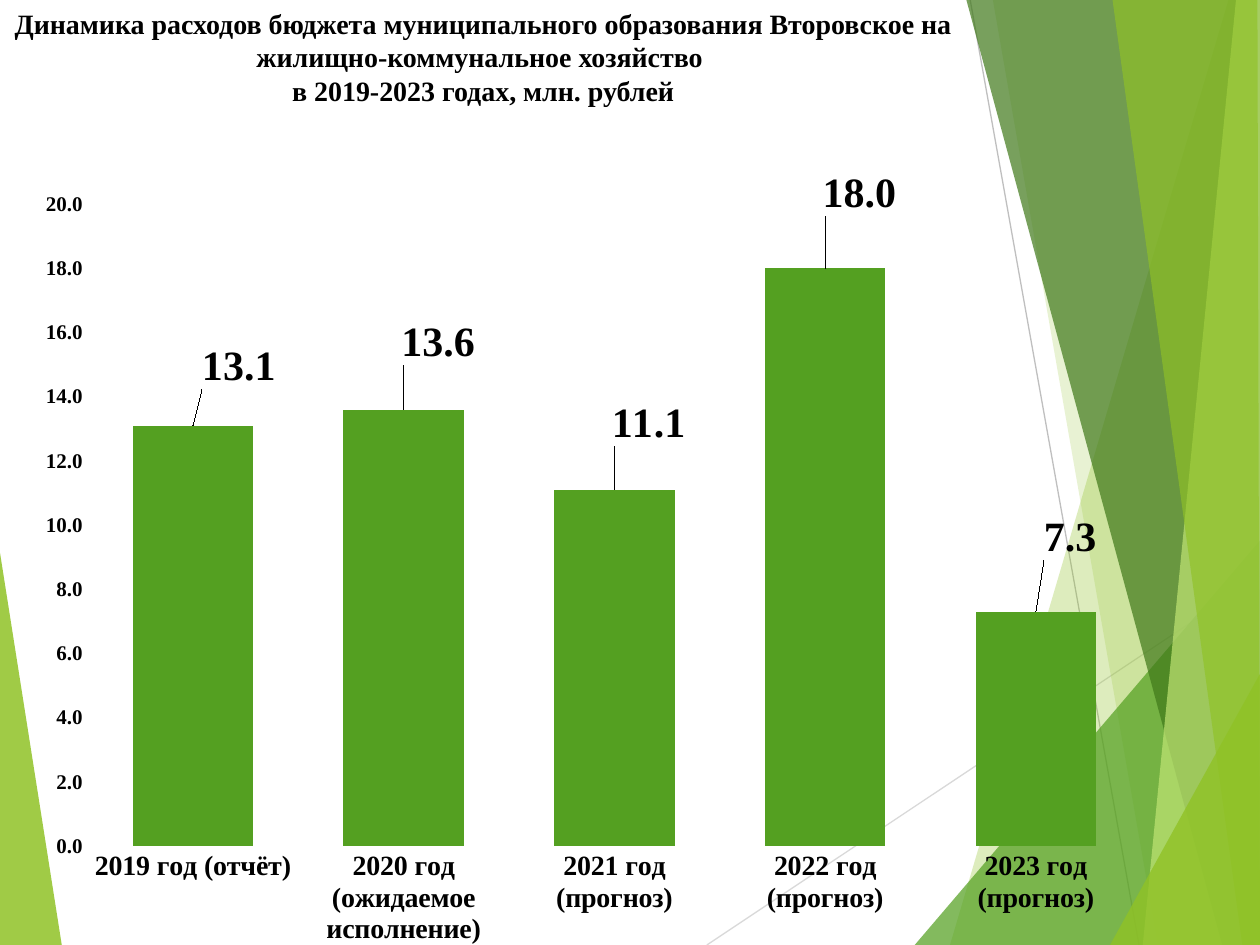
from lxml.etree import SubElement
from pptx import Presentation
from pptx.chart.data import CategoryChartData
from pptx.dml.color import RGBColor
from pptx.enum.chart import XL_CHART_TYPE, XL_LABEL_POSITION, XL_TICK_MARK
from pptx.enum.shapes import MSO_CONNECTOR
from pptx.enum.text import MSO_ANCHOR, PP_ALIGN
from pptx.oxml.ns import qn
from pptx.util import Inches, Pt

COLORS = {
    "black": "000000",
    "lime": "90C226",
    "green": "54A021",
    "forest": "3F7819",
    "pale": "C0E474",
    "silver": "D9D9D9",
    "gray": "BFBFBF",
}
FACETS = [
    ("lime", 85, [(0, 58.5), (4.9, 100), (0, 100)]),
    ("lime", 30, [(97.5, 0), (75.4, 100), (100, 100), (100, 0)]),
    ("lime", 20, [(78.8, 0), (91.9, 100), (100, 100), (100, 0)]),
    ("green", 72, [(72.6, 100), (100, 57.2), (100, 100)]),
    ("forest", 70, [(76.7, 0), (97, 100), (100, 100), (100, 0)]),
    ("pale", 70, [(98.1, 0), (90.7, 100), (100, 100), (100, 0)]),
    ("lime", 65, [(88.3, 0), (98.6, 100), (100, 100), (99.8, 0)]),
    ("lime", 80, [(88.1, 100), (100, 71.3), (100, 100)]),
]
RAYS = [("silver", (56.1, 100), (100, 61)), ("gray", (77, 0), (90.4, 100))]
TITLE = (
    "Динамика расходов бюджета муниципального образования Второвское на "
    "жилищно-коммунальное хозяйство \vв 2019-2023 годах, млн. рублей"
)
SPENDING = {
    "2019 год (отчёт)": 13.1,
    "2020 год (ожидаемое исполнение)": 13.6,
    "2021 год (прогноз)": 11.1,
    "2022 год (прогноз)": 18.0,
    "2023 год (прогноз)": 7.3,
}
LABEL_SHIFTS = [(0.04, -0.04), (0.03, -0.05), (0.03, -0.05), (0.03, -0.06), (0.03, -0.06)]
PLOT_AREA = {"layoutTarget": "inner", "xMode": "edge", "yMode": "edge",
             "x": 0.06, "y": 0.05, "w": 0.92, "h": 0.83}


def set_all(target, values):
    for name, value in values.items():
        setattr(target, name, value)


def place_manually(parent, index, values):
    for old in parent.findall(qn("c:layout")):
        parent.remove(old)
    layout = SubElement(parent, qn("c:layout"))
    manual = SubElement(layout, qn("c:manualLayout"))
    for name, value in values.items():
        SubElement(manual, qn(f"c:{name}")).set("val", str(value))
    parent.insert(index, layout)


class SlideBuilder:
    """Draws styled elements on one slide, with lengths in percent of its size."""

    def __init__(self, deck):
        self.deck = deck
        self.page = deck.slides.add_slide(deck.slide_layouts[6])
        self.font_values = {"name": "Times New Roman", "bold": True}

    def point(self, across, down):
        return (round(self.deck.slide_width * across / 100),
                round(self.deck.slide_height * down / 100))

    def color(self, name):
        return RGBColor.from_string(COLORS[name])

    def style(self, font, size):
        set_all(font, {**self.font_values, "size": Pt(size)})
        font.color.rgb = self.color("black")

    def facet(self, color, opacity, corners):
        start, *others = [self.point(*corner) for corner in corners]
        builder = self.page.shapes.build_freeform(*start, scale=1.0)
        builder.add_line_segments(others, close=True)
        shape = builder.convert_to_shape()
        shape.shadow.inherit = False
        shape.line.fill.background()
        shape.fill.solid()
        shape.fill.fore_color.rgb = self.color(color)
        tint = shape._element.spPr.find(".//" + qn("a:srgbClr"))
        SubElement(tint, qn("a:alpha")).set("val", str(opacity * 1000))

    def ray(self, color, start, end):
        line = self.page.shapes.add_connector(
            MSO_CONNECTOR.STRAIGHT, *self.point(*start), *self.point(*end))
        line.line.color.rgb = self.color(color)
        line.line.width = Pt(0.75)
        SubElement(line._element.spPr, qn("a:effectLst"))

    def title(self, text, position, size):
        box = self.page.shapes.add_textbox(*self.point(*position), *self.point(*size))
        set_all(box.text_frame, {"word_wrap": True, "vertical_anchor": MSO_ANCHOR.TOP})
        para = box.text_frame.paragraphs[0]
        para.text = text
        para.alignment = PP_ALIGN.CENTER
        for span in para.runs:
            self.style(span.font, 16)

    def axis(self, axis, size):
        set_all(axis, {"has_major_gridlines": False,
                       "major_tick_mark": XL_TICK_MARK.NONE,
                       "minor_tick_mark": XL_TICK_MARK.NONE})
        axis.format.line.fill.background()
        self.style(axis.tick_labels.font, size)

    def column_chart(self, values, shifts, position, size):
        data = CategoryChartData(number_format="0.0")
        data.categories = list(values)
        data.add_series("Series 1", list(values.values()))
        chart = self.page.shapes.add_chart(
            XL_CHART_TYPE.COLUMN_CLUSTERED,
            *self.point(*position), *self.point(*size), data).chart
        set_all(chart, {"has_legend": False, "has_title": False})
        set_all(chart.font, {"name": "Lato", "size": Pt(10)})
        chart.font.color.rgb = self.color("black")
        self.axis(chart.category_axis, 16)
        self.axis(chart.value_axis, 12)
        set_all(chart.value_axis,
                {"minimum_scale": 0, "maximum_scale": 20, "major_unit": 2})
        set_all(chart.value_axis.tick_labels,
                {"number_format": "0.0", "number_format_is_linked": False})
        plot = chart.plots[0]
        set_all(plot, {"gap_width": 75, "vary_by_categories": False})
        series = plot.series[0]
        series.format.fill.solid()
        series.format.fill.fore_color.rgb = self.color("green")
        set_all(series.data_labels,
                {"show_value": True, "number_format": "0.0",
                 "number_format_is_linked": False,
                 "position": XL_LABEL_POSITION.OUTSIDE_END})
        self.style(series.data_labels.font, 24)
        for index in range(len(values)):
            label = series.points[index].data_label
            self.style(label.font, 24)
            label.position = XL_LABEL_POSITION.OUTSIDE_END
        for label, shift in zip(series._element.iter(qn("c:dLbl")), shifts):
            place_manually(label, 1, dict(zip("xy", shift)))
        place_manually(chart._chartSpace.chart.plotArea, 0, PLOT_AREA)


def main():
    deck = Presentation()
    set_all(deck, {"slide_width": Inches(10), "slide_height": Inches(7.5)})
    slide = SlideBuilder(deck)
    slide.facet(*FACETS[0])
    for ray in RAYS:
        slide.ray(*ray)
    for facet in FACETS[1:]:
        slide.facet(*facet)
    slide.title(TITLE, (0, 0), (76.7, 16.1))
    slide.column_chart(SPENDING, LABEL_SHIFTS, (1.5, 17.5), (90.9, 82.5))
    deck.save("out.pptx")


if __name__ == "__main__":
    main()
